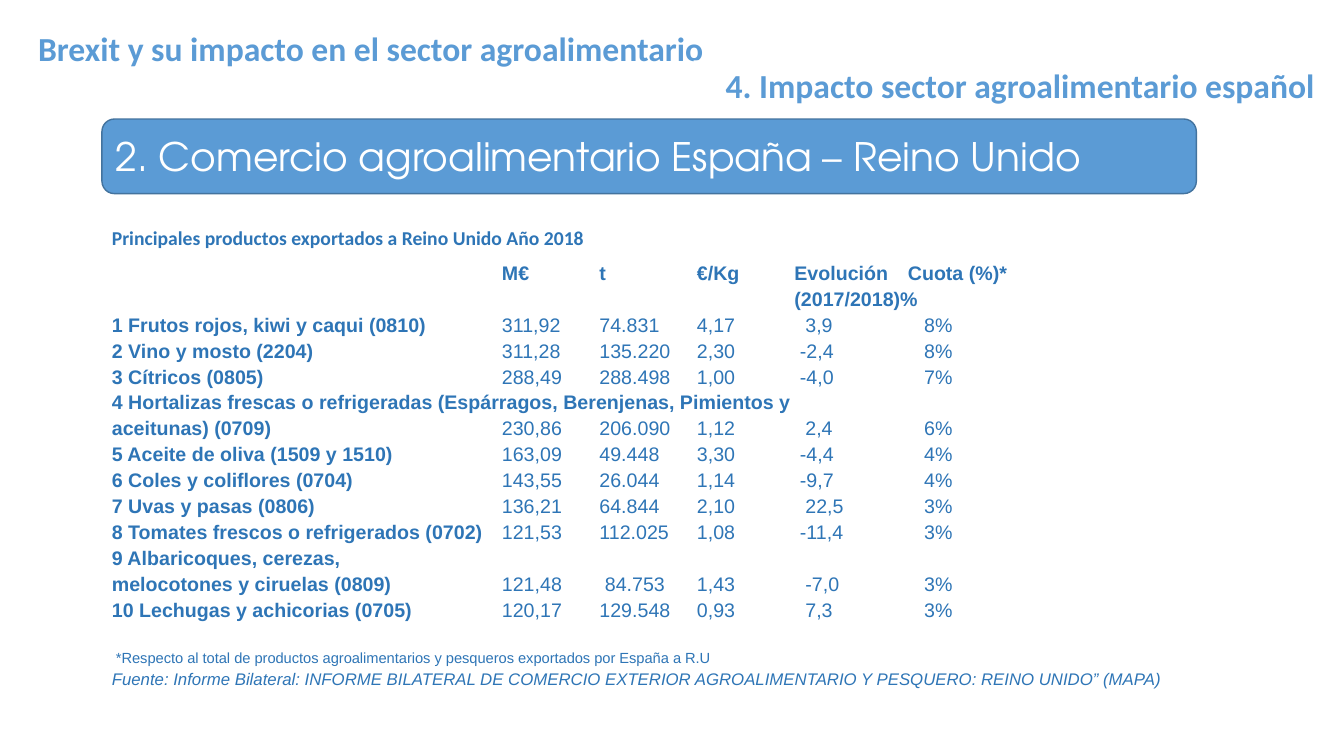
from lxml.etree import SubElement
from pptx import Presentation
from pptx.dml.color import RGBColor
from pptx.enum.shapes import MSO_SHAPE
from pptx.enum.text import MSO_ANCHOR, PP_ALIGN
from pptx.oxml.ns import qn
from pptx.util import Cm, Pt

COLORS = {"sky": "5B9BD5", "edge": "43739E", "ink": "2E75B6", "white": "FFFFFF"}

COLUMN_START, COLUMN_STEP = 9.83, 2.457
COLUMNS = [COLUMN_START + COLUMN_STEP * i for i in range(4)]
HEADER_TABS = COLUMNS + [20.06]
DATA_TABS = COLUMNS[:3] + [17.34, 20.47]

HEADERS = ["M€", "t", "€/Kg", "Evolución", "Cuota (%)*"]
PRODUCTS = [
    ("1 Frutos rojos, kiwi y caqui (0810)", "311,92", "74.831", "4,17", " 3,9", "8%"),
    ("2 Vino y mosto (2204)", "311,28", "135.220", "2,30", "-2,4", "8%"),
    ("3 Cítricos (0805)", "288,49", "288.498", "1,00", "-4,0", "7%"),
    ("4 Hortalizas frescas o refrigeradas (Espárragos, Berenjenas, Pimientos y",),
    ("aceitunas) (0709)", "230,86", "206.090", "1,12", " 2,4", "6%"),
    ("5 Aceite de oliva (1509 y 1510)", "163,09", "49.448", "3,30", "-4,4", "4%"),
    ("6 Coles y coliflores (0704)", "143,55", "26.044", "1,14", "-9,7", "4%"),
    ("7 Uvas y pasas (0806)", "136,21", "64.844", "2,10", " 22,5", "3%"),
    ("8 Tomates frescos o refrigerados (0702)", "121,53", "112.025", "1,08", "-11,4", "3%"),
    ("9 Albaricoques, cerezas,",),
    ("melocotones y ciruelas (0809)", "121,48", " 84.753", "1,43", " -7,0", "3%"),
    ("10 Lechugas y achicorias (0705)", "120,17", "129.548", "0,93", " 7,3", "3%"),
]


def color(name):
    return RGBColor.from_string(COLORS[name])


def add_span(para, text, size=14, font="Arial", ink="ink", bold=False, italic=False):
    span = para.add_run()
    span.text = text
    span.font.size = Pt(size)
    span.font.name = font
    span.font.color.rgb = color(ink)
    span.font.bold = bold
    span.font.italic = italic


def add_heading(page, text, left, top, width, height, align=PP_ALIGN.LEFT, fill=None, **style):
    box = page.shapes.add_textbox(Cm(left), Cm(top), Cm(width), Cm(height))
    box.text_frame.word_wrap = True
    if fill:
        box.fill.solid()
        box.fill.fore_color.rgb = color(fill)
    para = box.text_frame.paragraphs[0]
    para.alignment = align
    add_span(para, text, font="Calibri", bold=True, **style)


def add_banner(page, text, left, top, width, height):
    banner = page.shapes.add_shape(
        MSO_SHAPE.ROUNDED_RECTANGLE, Cm(left), Cm(top), Cm(width), Cm(height))
    banner.shadow.inherit = False
    banner.fill.solid()
    banner.fill.fore_color.rgb = color("sky")
    banner.line.color.rgb = color("edge")
    banner.line.width = Pt(1)
    frame = banner.text_frame
    frame.word_wrap = True
    frame.vertical_anchor = MSO_ANCHOR.MIDDLE
    para = frame.paragraphs[0]
    para.alignment = PP_ALIGN.LEFT
    add_span(para, text, size=28, font="TeX Gyre Adventor", ink="white")


def add_line(frame, tabs=(), before=3.4):
    """Return a new paragraph with its tab stops, reusing the empty first one."""
    first = frame.paragraphs[0]
    if first.runs:
        para = frame.add_paragraph()
        para.space_before = Pt(before)
    else:
        para = first
        para.space_before = Pt(0)
    para.line_spacing = 0.9
    if tabs:
        stops = SubElement(para._p.get_or_add_pPr(), qn("a:tabLst"))
        for position in tabs:
            SubElement(stops, qn("a:tab"), pos=str(Cm(position)), algn="l")
    return para


def add_export_list(page, left, top, width, height):
    box = page.shapes.add_textbox(Cm(left), Cm(top), Cm(width), Cm(height))
    frame = box.text_frame
    frame.word_wrap = True
    add_span(add_line(frame, HEADER_TABS), "\t" + "\t".join(HEADERS), bold=True)
    add_span(add_line(frame, COLUMNS[3:]), "\t(2017/2018)%", bold=True)
    for product, *values in PRODUCTS:
        para = add_line(frame, DATA_TABS if values else ())
        add_span(para, product, bold=True)
        if values:
            add_span(para, "\t" + "\t".join(values))
    add_span(
        add_line(frame, before=20.8),
        " *Respecto al total de productos agroalimentarios y pesqueros exportados por España a R.U",
        size=10.5)
    add_span(
        add_line(frame, before=3),
        "Fuente: Informe Bilateral: INFORME BILATERAL DE COMERCIO EXTERIOR "
        "AGROALIMENTARIO Y PESQUERO: REINO UNIDO” (MAPA)",
        size=12, italic=True)


def main():
    deck = Presentation()
    deck.slide_width, deck.slide_height = Cm(33.87), Cm(19.05)
    page = deck.slides.add_slide(deck.slide_layouts[6])
    add_heading(page, "Brexit y su impacto en el sector agroalimentario",
                0.71, 0.58, 18.08, 1.27, fill="white", size=24, ink="sky")
    add_heading(page, "4. Impacto sector agroalimentario español",
                17.48, 1.52, 15.9, 1.27, align=PP_ALIGN.RIGHT, fill="white", size=24, ink="sky")
    add_banner(page, "2. Comercio agroalimentario España – Reino Unido", 2.57, 3, 27.58, 1.88)
    add_heading(page, "Principales productos exportados a Reino Unido Año 2018",
                2.57, 5.56, 27.58, 0.86)
    add_export_list(page, 2.57, 6.51, 27.58, 11.4)
    deck.save("out.pptx")


if __name__ == "__main__":
    main()
